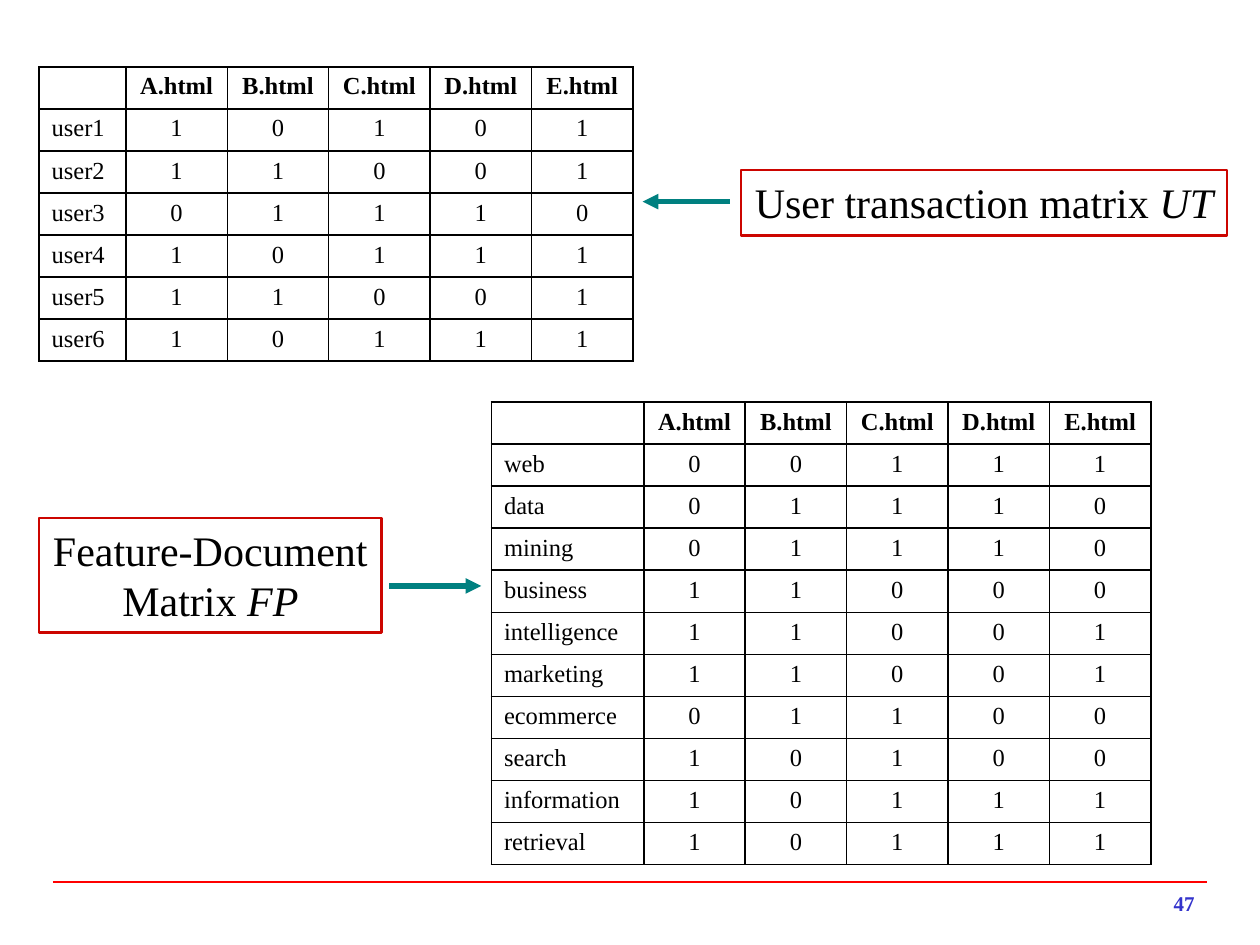
from lxml import etree
from pptx import Presentation
from pptx import util as u
from pptx.dml.color import RGBColor
from pptx.enum import shapes, text
from pptx.oxml.ns import qn

FONT = "Times New Roman"
COLORS = {
    "text": "000000",
    "frame": "CC0500",
    "arrow": "008080",
    "rule": "FF0000",
    "number": "3333CC",
}
PAGES = ["A.html", "B.html", "C.html", "D.html", "E.html"]
USER_TRANSACTIONS = {
    "user1": "10101",
    "user2": "11001",
    "user3": "01110",
    "user4": "10111",
    "user5": "11001",
    "user6": "10111",
}
FEATURE_DOCUMENTS = {
    "web": "00111",
    "data": "01110",
    "mining": "01110",
    "business": "11000",
    "intelligence": "11001",
    "marketing": "11001",
    "ecommerce": "01100",
    "search": "10100",
    "information": "10111",
    "retrieval": "10111",
}
PAGE_WIDTH = 0.805
ROW_HEIGHT = 0.31


def rgb(name):
    return RGBColor.from_string(COLORS[name])


def add_run(p, content, size, color="text", bold=False, italic=False):
    r = p.add_run()
    r.text = content
    r.font.name = FONT
    r.font.size = u.Pt(size)
    r.font.bold = bold
    r.font.italic = italic
    r.font.color.rgb = rgb(color)


def add_borders(cell):
    tc_pr = cell._tc.get_or_add_tcPr()
    for side in ("lnL", "lnR", "lnT", "lnB"):
        ln = etree.SubElement(tc_pr, qn(f"a:{side}"), w=str(u.Pt(1)))
        fill = etree.SubElement(ln, qn("a:solidFill"))
        etree.SubElement(fill, qn("a:srgbClr"), val=COLORS["text"])


def add_matrix(slide, left, top, label_width, matrix):
    """Draw a 0/1 matrix with one column per page and one row per label."""
    rows = [["", *PAGES]] + [[label, *bits] for label, bits in matrix.items()]
    widths = [label_width] + [PAGE_WIDTH] * len(PAGES)
    frame = slide.shapes.add_table(
        len(rows), len(widths), u.Inches(left), u.Inches(top),
        u.Inches(sum(widths)), u.Inches(ROW_HEIGHT * len(rows)))
    table = frame.table
    table.first_row = table.horz_banding = False
    for column, width in zip(table.columns, widths):
        column.width = u.Inches(width)
    for i, values in enumerate(rows):
        table.rows[i].height = u.Inches(ROW_HEIGHT)
        for j, value in enumerate(values):
            cell = table.cell(i, j)
            add_borders(cell)
            cell.fill.background()
            if not value:
                # keeps the default-size empty line within the row height
                cell.margin_top = cell.margin_bottom = 0
                continue
            p = cell.text_frame.paragraphs[0]
            p.alignment = text.PP_ALIGN.CENTER if j else text.PP_ALIGN.JUSTIFY
            add_run(p, value, 14, bold=i == 0)


def add_caption(slide, left, top, width, height, lines):
    """Draw a framed caption; each line is a list of (text, italic) runs."""
    sp = slide.shapes.add_shape(
        shapes.MSO_SHAPE.RECTANGLE, u.Inches(left), u.Inches(top),
        u.Inches(width), u.Inches(height))
    sp.shadow.inherit = False
    sp.fill.background()
    sp.line.color.rgb = rgb("frame")
    sp.line.width = u.Pt(1.5)
    tf = sp.text_frame
    tf.word_wrap = False
    tf.auto_size = text.MSO_AUTO_SIZE.SHAPE_TO_FIT_TEXT
    tf.vertical_anchor = text.MSO_ANCHOR.TOP
    for i, runs in enumerate(lines):
        p = tf.add_paragraph() if i else tf.paragraphs[0]
        p.alignment = text.PP_ALIGN.CENTER
        for content, italic in runs:
            add_run(p, content, 24, italic=italic)


def add_line(slide, x1, x2, y, color, width, arrow=False):
    """Draw a horizontal line, with an optional arrowhead at x2."""
    line = slide.shapes.add_connector(
        shapes.MSO_CONNECTOR.STRAIGHT,
        u.Inches(x1), u.Inches(y), u.Inches(x2), u.Inches(y))
    line.line.color.rgb = rgb(color)
    line.line.width = u.Pt(width)
    if arrow:
        etree.SubElement(line.line._get_or_add_ln(), qn("a:tailEnd"), type="triangle")
    etree.SubElement(line._element.spPr, qn("a:effectLst"))


def add_page_number(slide, number):
    box = slide.shapes.add_textbox(
        u.Inches(7.5), u.Inches(7), u.Inches(2.08), u.Inches(0.33))
    tf = box.text_frame
    tf.word_wrap = True
    tf.vertical_anchor = text.MSO_ANCHOR.MIDDLE
    p = tf.paragraphs[0]
    p.alignment = text.PP_ALIGN.RIGHT
    add_run(p, number, 12, color="number", bold=True)


def main():
    prs = Presentation()
    prs.slide_width = u.Inches(10)
    prs.slide_height = u.Inches(7.5)
    slide = prs.slides.add_slide(prs.slide_layouts[6])

    add_line(slide, 0.42, 9.58, 7, "rule", 1)
    add_page_number(slide, "47")

    add_matrix(slide, 0.31, 0.53, 0.69, USER_TRANSACTIONS)
    add_matrix(slide, 3.9, 3.19, 1.21, FEATURE_DOCUMENTS)

    add_caption(slide, 5.88, 1.35, 3.86, 0.52,
                [[("User transaction matrix ", False), ("UT", True)]])
    add_line(slide, 5.79, 5.1, 1.6, "arrow", 3, arrow=True)

    add_caption(slide, 0.31, 4.11, 2.72, 0.91,
                [[("Feature-Document", False)],
                 [("Matrix ", False), ("FP", True)]])
    add_line(slide, 3.09, 3.82, 4.65, "arrow", 3, arrow=True)

    prs.save("out.pptx")


if __name__ == "__main__":
    main()
